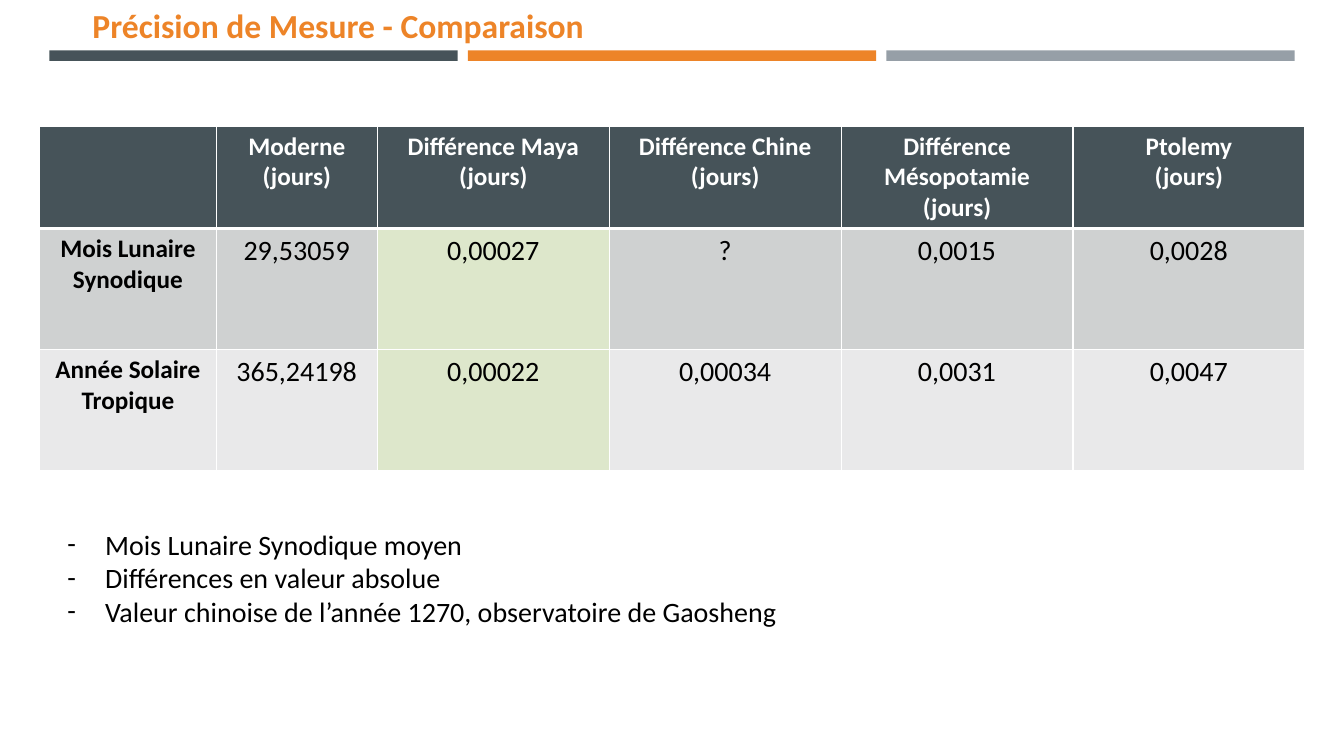
"""Build the slide comparing the precision of ancient astronomical measurements."""
import lxml.etree
import pptx
import pptx.dml.color
import pptx.enum.shapes
import pptx.enum.text
import pptx.oxml.ns
import pptx.util

Pt = pptx.util.Pt
RGBColor = pptx.dml.color.RGBColor
qn = pptx.oxml.ns.qn

SLATE = RGBColor(0x46, 0x53, 0x59)
ORANGE = RGBColor(0xED, 0x84, 0x28)
GREY = RGBColor(0x96, 0x9F, 0xA7)
WHITE = RGBColor(0xFF, 0xFF, 0xFF)
BLACK = RGBColor(0x00, 0x00, 0x00)
GREEN = RGBColor(0xDD, 0xE7, 0xCB)
ROW_FILLS = [SLATE, RGBColor(0xCF, 0xD1, 0xD1), RGBColor(0xE9, 0xE9, 0xEA)]
FONT = "Calibri"

TITLE = "Précision de Mesure - Comparaison"
MEASURES = [
    ["", "Moderne (jours)", "Différence Maya\v(jours)", "Différence Chine\n(jours)",
     "Différence Mésopotamie\n(jours)", "Ptolemy\n(jours)"],
    ["Mois Lunaire Synodique", "29,53059", "0,00027", "?", "0,0015", "0,0028"],
    ["Année Solaire Tropique", "365,24198", "0,00022", "0,00034", "0,0031", "0,0047"],
]
NOTES = [
    "Mois Lunaire Synodique moyen",
    "Différences en valeur absolue",
    "Valeur chinoise de l’année 1270, observatoire de Gaosheng",
]
COLUMN_WIDTHS = [126, 115.2] + [165.6] * 4
ROW_HEIGHTS = [67, 86.4, 86.4]
MAYA_COLUMN = 2
BAR_LEFT, BAR_TOP, BAR_WIDTH, BAR_HEIGHT, BAR_PITCH = 35.3, 36, 291.6, 7.5, 298.9
NOTE_INDENT = 27


def style_text(frame, size, color, bold=False, align=None):
    for para in frame.paragraphs:
        para.alignment = align
        for span in para.runs:
            span.font.name = FONT
            span.font.size = Pt(size)
            span.font.bold = bold
            span.font.color.rgb = color


def add_text(page, left, top, width, height, text, wrap=True):
    box = page.shapes.add_textbox(Pt(left), Pt(top), Pt(width), Pt(height))
    box.text_frame.word_wrap = wrap
    box.text_frame.text = text
    return box.text_frame


def set_borders(cell, bottom_width):
    properties = cell._tc.get_or_add_tcPr()
    widths = {"a:lnL": 1, "a:lnR": 1, "a:lnT": 1, "a:lnB": bottom_width}
    for position, (tag, width) in enumerate(widths.items()):
        line = lxml.etree.Element(qn(tag), w=str(Pt(width)))
        fill = lxml.etree.SubElement(line, qn("a:solidFill"))
        lxml.etree.SubElement(fill, qn("a:srgbClr"), val=str(WHITE))
        properties.insert(position, line)


def add_bars(page):
    for index, color in enumerate([SLATE, ORANGE, GREY]):
        bar = page.shapes.add_shape(
            pptx.enum.shapes.MSO_SHAPE.RECTANGLE, Pt(BAR_LEFT + index * BAR_PITCH),
            Pt(BAR_TOP), Pt(BAR_WIDTH), Pt(BAR_HEIGHT))
        bar.shadow.inherit = False
        bar.fill.solid()
        bar.fill.fore_color.rgb = color
        bar.line.fill.background()


def add_measures(page):
    table = page.shapes.add_table(
        len(MEASURES), len(COLUMN_WIDTHS), Pt(28.4), Pt(90),
        Pt(sum(COLUMN_WIDTHS)), Pt(sum(ROW_HEIGHTS))).table
    for column, width in zip(table.columns, COLUMN_WIDTHS):
        column.width = Pt(width)
    for row, height in zip(table.rows, ROW_HEIGHTS):
        row.height = Pt(height)
    for row_index, texts in enumerate(MEASURES):
        header = row_index == 0
        for column_index, text in enumerate(texts):
            label = header or column_index == 0
            highlighted = column_index == MAYA_COLUMN and not header
            cell = table.cell(row_index, column_index)
            cell.text_frame.text = text
            style_text(cell.text_frame, 18 if label else 20, WHITE if header else BLACK,
                       label, pptx.enum.text.PP_ALIGN.CENTER)
            cell.fill.solid()
            cell.fill.fore_color.rgb = GREEN if highlighted else ROW_FILLS[row_index]
            set_borders(cell, 3 if header else 1)


def add_notes(page):
    frame = add_text(page, 41, 373, 524, 80, "\n".join(NOTES), wrap=False)
    style_text(frame, 20, BLACK)
    for para in frame.paragraphs:
        properties = para._p.get_or_add_pPr()
        properties.set("marL", str(Pt(NOTE_INDENT)))
        properties.set("indent", str(-Pt(NOTE_INDENT)))
        lxml.etree.SubElement(properties, qn("a:buFont"), typeface=FONT)
        lxml.etree.SubElement(properties, qn("a:buChar"), char="-")


def main():
    deck = pptx.Presentation()
    deck.slide_width, deck.slide_height = Pt(960), Pt(540)
    page = deck.slides.add_slide(deck.slide_layouts[6])
    add_bars(page)
    add_measures(page)
    style_text(add_text(page, 59, 0, 705.6, 36, TITLE), 24, ORANGE, True)
    add_notes(page)
    deck.save("out.pptx")


if __name__ == "__main__":
    main()
